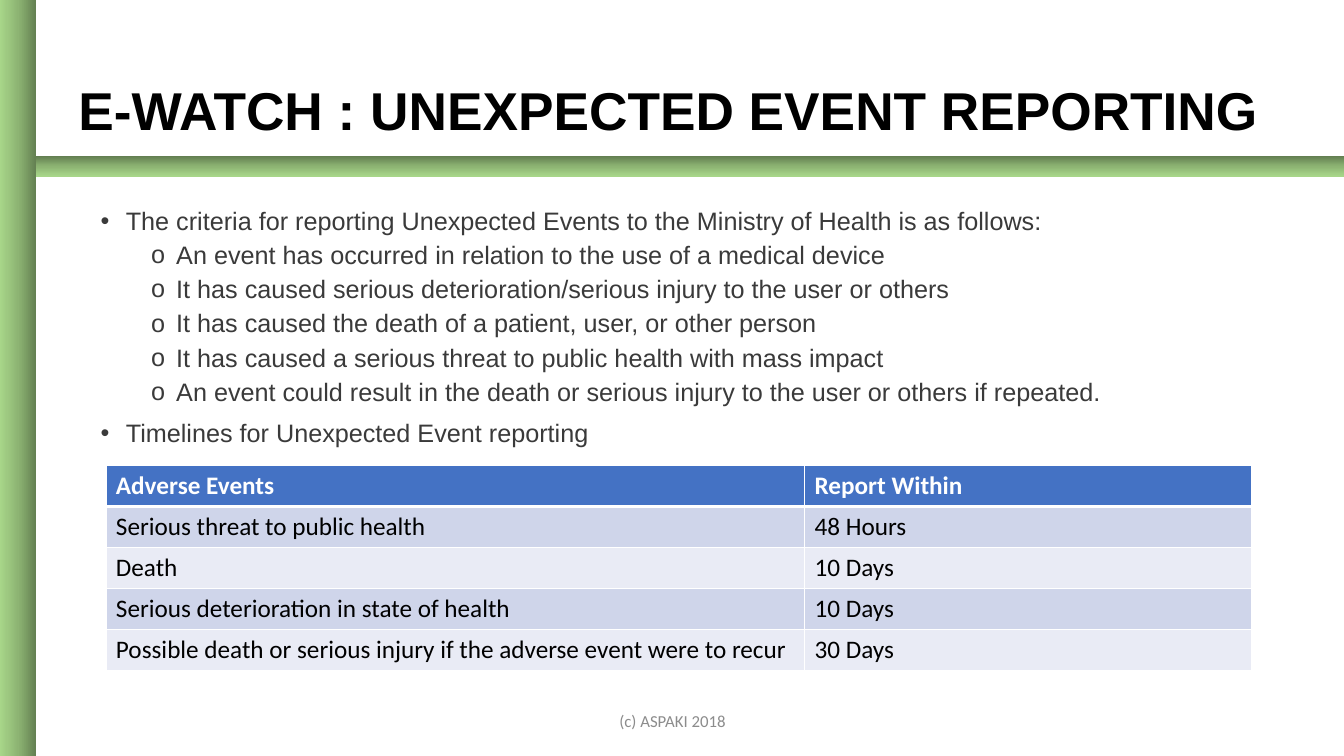
from dataclasses import dataclass
from typing import NamedTuple

from lxml.etree import SubElement
from pptx import Presentation
from pptx.dml.color import RGBColor
from pptx.enum.shapes import MSO_SHAPE as Shape
from pptx.enum.text import MSO_ANCHOR as Anchor, PP_ALIGN as Align
from pptx.oxml import parse_xml
from pptx.oxml.ns import nsdecls, qn
from pptx.util import Emu, Inches, Pt


@dataclass(frozen=True)
class Theme:
    heading_font: str = "Arial"
    table_font: str = "Calibri"
    title_size: int = 38
    text_size: int = 18
    footer_size: int = 12
    black: str = "000000"
    white: str = "FFFFFF"
    body: str = "3A3A3A"
    footer: str = "8C8C8C"
    header_fill: str = "4472C4"
    bands: tuple[str, str] = ("CFD5EA", "E9EBF5")
    greens: tuple[tuple[int, str], ...] = ((0, "637F51"), (50, "8DB473"), (100, "A8D689"))


class Area(NamedTuple):
    left: float
    top: float
    width: float
    height: float


class Level(NamedTuple):
    mark: str
    indent: float
    before: int


class Point(NamedTuple):
    text: str
    level: Level


class Bar(NamedTuple):
    area: Area
    upright: bool


THEME = Theme()
WIDTH, HEIGHT = Inches(13.33), Inches(7.5)
HANGING = 0.25
MAIN, SUB = Level("•", 0.25, 10), Level("o", 0.75, 5)

BARS = (
    Bar(Area(0, 20.67, 100, 2.67), False),
    Bar(Area(0, 0, 2.7, 100), True),
)
TITLE_AREA = Area(5.1, 5.33, 90.4, 19.33)
FOOTER_AREA = Area(33.16, 92.67, 33.76, 5.33)
BODY_AREA = Area(6.75, 26.93, 91, 63.47)
TABLE_AREA = Area(7.88, 61.6, 85.22, 27.07)
EVENT_SHARE = 0.61

POINTS = (
    Point("The criteria for reporting Unexpected Events to the Ministry of Health is as follows:", MAIN),
    Point("An event has occurred in relation to the use of a medical device", SUB),
    Point("It has caused serious deterioration/serious injury to the user or others", SUB),
    Point("It has caused the death of a patient, user, or other person", SUB),
    Point("It has caused a serious threat to public health with mass impact", SUB),
    Point("An event could result in the death or serious injury to the user or others if repeated.", SUB),
    Point("Timelines for Unexpected Event reporting", MAIN),
)
TIMELINES = (
    ("Adverse Events", "Report Within"),
    ("Serious threat to public health", "48 Hours"),
    ("Death", "10 Days"),
    ("Serious deterioration in state of health", "10 Days"),
    ("Possible death or serious injury if the adverse event were to recur", "30 Days"),
)


def place(area: Area) -> tuple[Emu, Emu, Emu, Emu]:
    return (
        Emu(round(WIDTH * area.left / 100)),
        Emu(round(HEIGHT * area.top / 100)),
        Emu(round(WIDTH * area.width / 100)),
        Emu(round(HEIGHT * area.height / 100)),
    )


def write(para, text: str, *, size: int, color: str, font: str = THEME.heading_font,
          bold: bool = False, align: Align = Align.LEFT, spacing: float = 1.0) -> None:
    para.alignment = align
    para.line_spacing = spacing
    span = para.add_run()
    span.text = text
    span.font.name = font
    span.font.size = Pt(size)
    span.font.bold = bold
    span.font.color.rgb = RGBColor.from_string(color)


def add_bar(page, bar: Bar) -> None:
    left, top, width, height = place(bar.area)
    if bar.upright:
        left, top = left + (width - height) // 2, top + (height - width) // 2
        width, height = height, width
    box = page.shapes.add_shape(Shape.RECTANGLE, left, top, width, height)
    box.rotation = 90 if bar.upright else 0
    box.shadow.inherit = False
    box.line.fill.background()
    box.fill.background()
    stops = "".join(
        f'<a:gs pos="{share * 1000}"><a:srgbClr val="{color}"/></a:gs>'
        for share, color in THEME.greens
    )
    gradient = parse_xml(
        f'<a:gradFill {nsdecls("a")} rotWithShape="1"><a:gsLst>{stops}</a:gsLst>'
        '<a:lin ang="5400000" scaled="0"/></a:gradFill>'
    )
    properties = box._element.spPr
    properties.replace(properties.find(qn("a:noFill")), gradient)


def add_frame(page, area: Area, anchor: Anchor):
    frame = page.shapes.add_textbox(*place(area)).text_frame
    frame.word_wrap = True
    frame.vertical_anchor = anchor
    return frame


def add_bullet(para, level: Level) -> None:
    properties = para._p.get_or_add_pPr()
    properties.set("marL", str(Inches(level.indent)))
    properties.set("indent", str(-Inches(HANGING)))
    SubElement(properties, qn("a:buFont"), typeface=THEME.heading_font)
    SubElement(properties, qn("a:buChar"), char=level.mark)


def add_points(page) -> None:
    frame = add_frame(page, BODY_AREA, Anchor.TOP)
    for index, point in enumerate(POINTS):
        para = frame.add_paragraph() if index else frame.paragraphs[0]
        add_bullet(para, point.level)
        para.space_before = Pt(point.level.before if index else 0)
        write(para, point.text, size=THEME.text_size, color=THEME.body, spacing=0.9)


def add_borders(cell, top: int, bottom: int) -> None:
    properties = cell._tc.get_or_add_tcPr()
    for side, weight in (("L", 1), ("R", 1), ("T", top), ("B", bottom)):
        line = SubElement(properties, qn(f"a:ln{side}"), w=str(Pt(weight)))
        SubElement(SubElement(line, qn("a:solidFill")), qn("a:srgbClr"), val=THEME.white)


def add_timelines(page) -> None:
    left, top, width, height = place(TABLE_AREA)
    table = page.shapes.add_table(len(TIMELINES), 2, left, top, width, height).table
    table.columns[0].width = Emu(round(width * EVENT_SHARE))
    table.columns[1].width = width - table.columns[0].width
    for row, texts in enumerate(TIMELINES):
        header = row == 0
        fill = THEME.header_fill if header else THEME.bands[(row - 1) % 2]
        for column, text in enumerate(texts):
            cell = table.cell(row, column)
            add_borders(cell, top=3 if row == 1 else 1, bottom=3 if header else 1)
            cell.fill.solid()
            cell.fill.fore_color.rgb = RGBColor.from_string(fill)
            write(cell.text_frame.paragraphs[0], text, size=THEME.text_size,
                  color=THEME.white if header else THEME.black,
                  font=THEME.table_font, bold=header)


def main() -> None:
    deck = Presentation()
    deck.slide_width, deck.slide_height = WIDTH, HEIGHT
    page = deck.slides.add_slide(deck.slide_layouts[6])
    for bar in BARS:
        add_bar(page, bar)
    title = add_frame(page, TITLE_AREA, Anchor.MIDDLE)
    write(title.paragraphs[0], "E-WATCH : UNEXPECTED EVENT REPORTING",
          size=THEME.title_size, color=THEME.black, bold=True, spacing=0.9)
    footer = add_frame(page, FOOTER_AREA, Anchor.MIDDLE)
    write(footer.paragraphs[0], "(c) ASPAKI 2018", size=THEME.footer_size,
          color=THEME.footer, font=THEME.table_font, align=Align.CENTER)
    add_points(page)
    add_timelines(page)
    deck.save("out.pptx")


if __name__ == "__main__":
    main()
